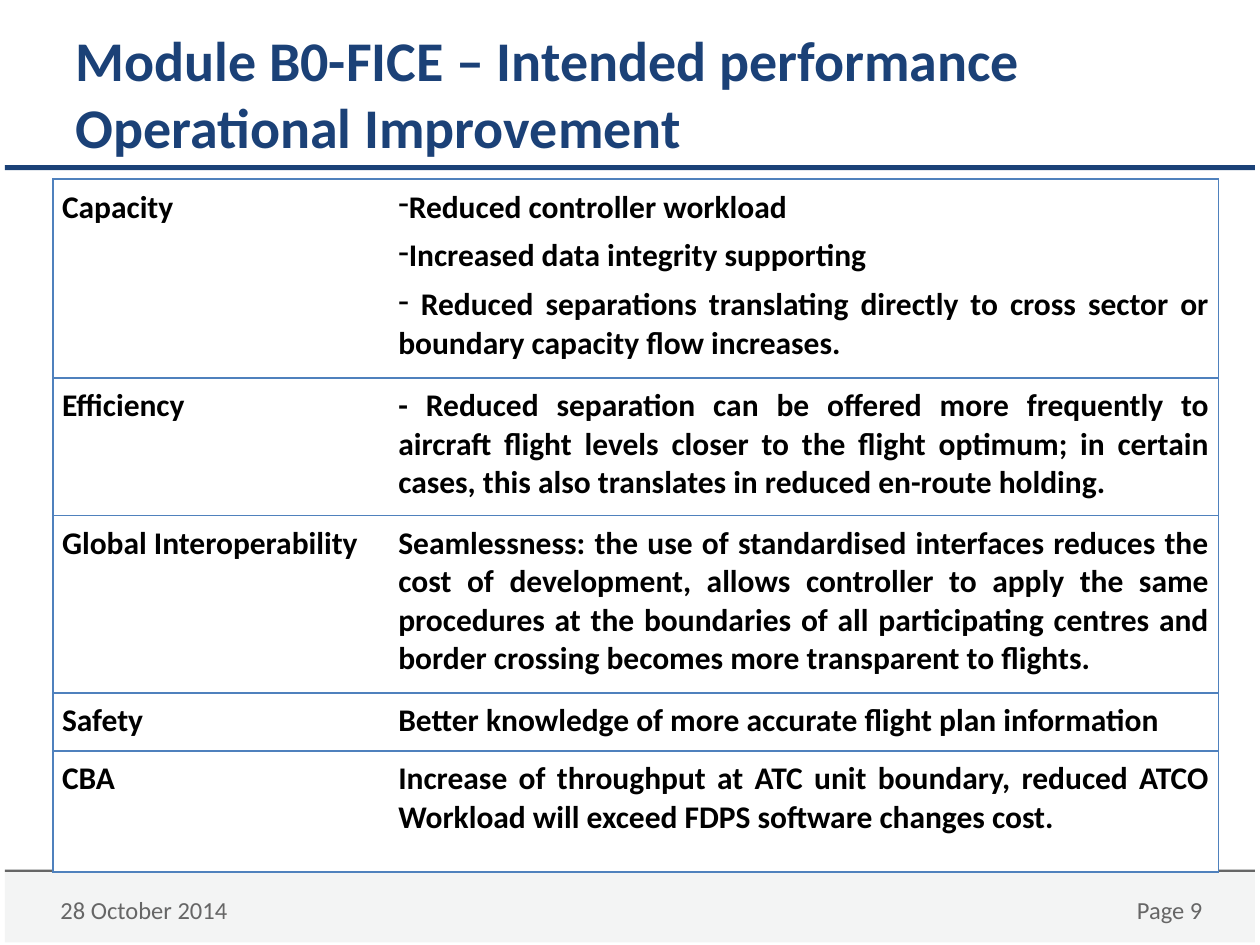
import pptx
import pptx.dml.color
import pptx.enum.shapes
import pptx.enum.text
import pptx.oxml
import pptx.oxml.ns
import pptx.util
from lxml import etree

Cm = pptx.util.Cm
Pt = pptx.util.Pt
RGBColor = pptx.dml.color.RGBColor
Align = pptx.enum.text.PP_ALIGN
Anchor = pptx.enum.text.MSO_ANCHOR
qn = pptx.oxml.ns.qn

NAVY = RGBColor(0x1B, 0x41, 0x77)
GREY = RGBColor(0x66, 0x66, 0x66)
PALE = RGBColor(0xF3, 0xF4, 0xF4)
BLUE = RGBColor(0x4F, 0x81, 0xBD)
BLACK = RGBColor(0, 0, 0)
WHITE = RGBColor(255, 255, 255)

TITLE = {"size": Pt(32), "bold": True, "color": NAVY}
FOOTER = {"size": Pt(14), "bold": False, "color": GREY}
CELL = {"size": Pt(18), "bold": True, "color": BLACK}

COLUMNS = (6.78, 16.71)
# Row height in cm, benefit area, whether its statements are dashed, statements
BENEFITS = (
    (4.01, "Capacity", True, (
        "Reduced controller workload",
        "Increased data integrity supporting",
        " Reduced separations translating directly to cross sector or boundary "
        "capacity flow increases.")),
    (2.77, "Efficiency", False, (
        "- Reduced separation can be offered more frequently to aircraft flight "
        "levels closer to the flight optimum; in certain cases, this also "
        "translates in reduced en-route holding.",)),
    (3.58, "Global Interoperability", False, (
        "Seamlessness: the use of standardised interfaces reduces the cost of "
        "development, allows controller to apply the same procedures at the "
        "boundaries of all participating centres and border crossing becomes "
        "more transparent to flights.",)),
    (1.17, "Safety", False, (
        "Better knowledge of more accurate flight plan information",)),
    (2.44, "CBA", False, (
        "Increase of throughput at ATC unit boundary, reduced ATCO Workload "
        "will exceed FDPS software changes cost.",)),
)


class SlideBuilder:
    def __init__(self, slide, font_name="Calibri"):
        self.slide = slide
        self.font_name = font_name

    def paragraphs(self, frame, texts, style, align=Align.LEFT, after=0,
                   dashed=False):
        for index, text in enumerate(texts):
            para = frame.add_paragraph() if index else frame.paragraphs[0]
            if dashed:
                bullet = etree.SubElement(para._p.get_or_add_pPr(), qn("a:buChar"))
                bullet.set("char", "-")
            para.alignment = align
            para.space_after = Pt(after)
            span = para.add_run()
            span.text = text
            span.font.name = self.font_name
            for name, value in style.items():
                if name == "color":
                    span.font.color.rgb = value
                else:
                    setattr(span.font, name, value)

    def text(self, left, top, width, height, text, style, align=Align.LEFT,
             anchor=Anchor.TOP):
        box = self.slide.shapes.add_textbox(Cm(left), Cm(top), Cm(width), Cm(height))
        box.text_frame.word_wrap = True
        box.text_frame.vertical_anchor = anchor
        self.paragraphs(box.text_frame, [text], style, align)

    def band(self, top, height, color):
        """Draw a plain bar across the slide."""
        bar = self.slide.shapes.add_shape(
            pptx.enum.shapes.MSO_SHAPE.RECTANGLE,
            Cm(0.1), Cm(top), Cm(25.2), Cm(height))
        bar.shadow.inherit = False
        bar.fill.solid()
        bar.fill.fore_color.rgb = color
        bar.line.fill.background()

    def border(self, cell, edges):
        """Rule the given edges of a cell and clear the others."""
        properties = cell._tc.get_or_add_tcPr()
        for edge in "LRTB":
            line = etree.SubElement(properties, qn(f"a:ln{edge}"), w=str(Pt(1)))
            if edge in edges:
                fill = etree.SubElement(line, qn("a:solidFill"))
                etree.SubElement(fill, qn("a:srgbClr"), val=str(BLUE))
            else:
                etree.SubElement(line, qn("a:noFill"))

    def cell(self, cell, texts, edges, **layout):
        self.border(cell, edges)
        cell.fill.solid()
        cell.fill.fore_color.rgb = WHITE
        for side in ("left", "right", "top", "bottom"):
            setattr(cell, f"margin_{side}", Cm(0.18))
        self.paragraphs(cell.text_frame, texts, CELL, **layout)

    def table(self, left, top, widths, rows):
        height = sum(row[0] for row in rows)
        table = self.slide.shapes.add_table(
            len(rows), len(widths), Cm(left), Cm(top),
            Cm(sum(widths)), Cm(height)).table
        table.first_row = table.horz_banding = False
        for column, width in zip(table.columns, widths):
            column.width = Cm(width)
        for row, (height, area, dashed, statements) in zip(table.rows, rows):
            row.height = Cm(height)
            self.cell(row.cells[0], [area], "LTB", after=3)
            self.cell(row.cells[1], statements, "RTB", after=6,
                      align=Align.JUSTIFY, dashed=dashed)


def main():
    deck = pptx.Presentation()
    deck.slide_width, deck.slide_height = Cm(25.4), Cm(19.05)
    page = SlideBuilder(deck.slides.add_slide(deck.slide_layouts[6]))
    page.band(17.53, 1.47, PALE)
    page.text(0.97, 17.91, 5.92, 1.02, "28 October 2014", FOOTER)
    page.text(18.57, 17.91, 5.92, 1.02, "Page 9", FOOTER, Align.RIGHT)
    page.band(17.53, 0.05, GREY)
    page.band(3.33, 0.1, NAVY)
    page.text(1.27, 0.28, 22.86, 3.18,
              "Module B0-FICE – Intended performance Operational Improvement",
              TITLE, anchor=Anchor.MIDDLE)
    page.table(1.07, 3.61, COLUMNS, BENEFITS)
    deck.save("out.pptx")


if __name__ == "__main__":
    main()
